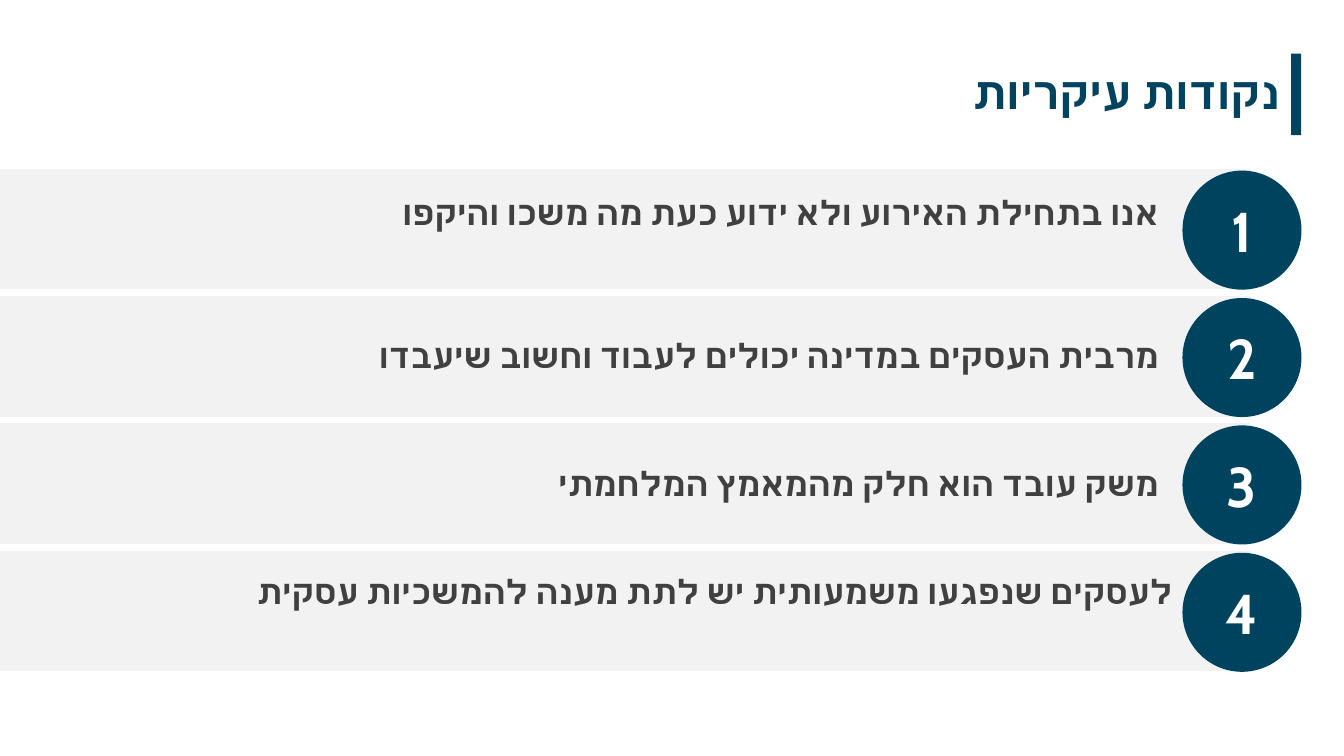
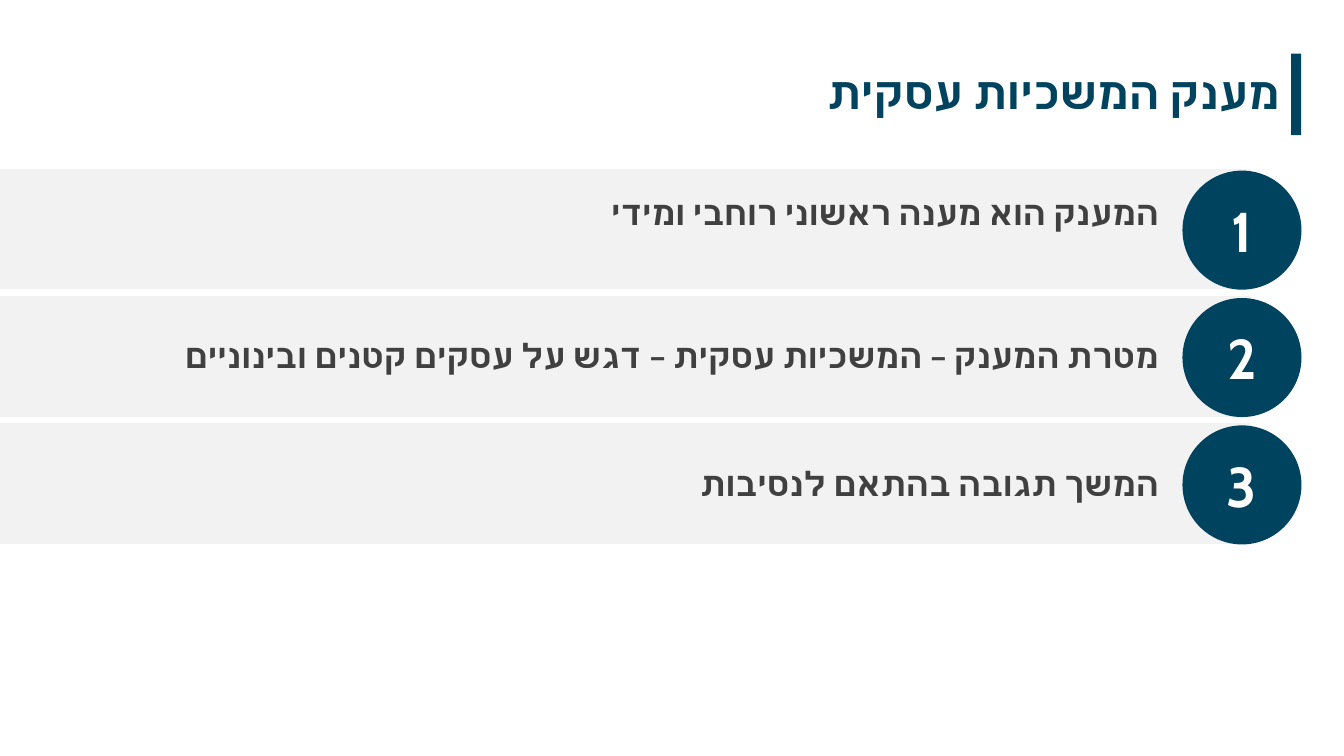
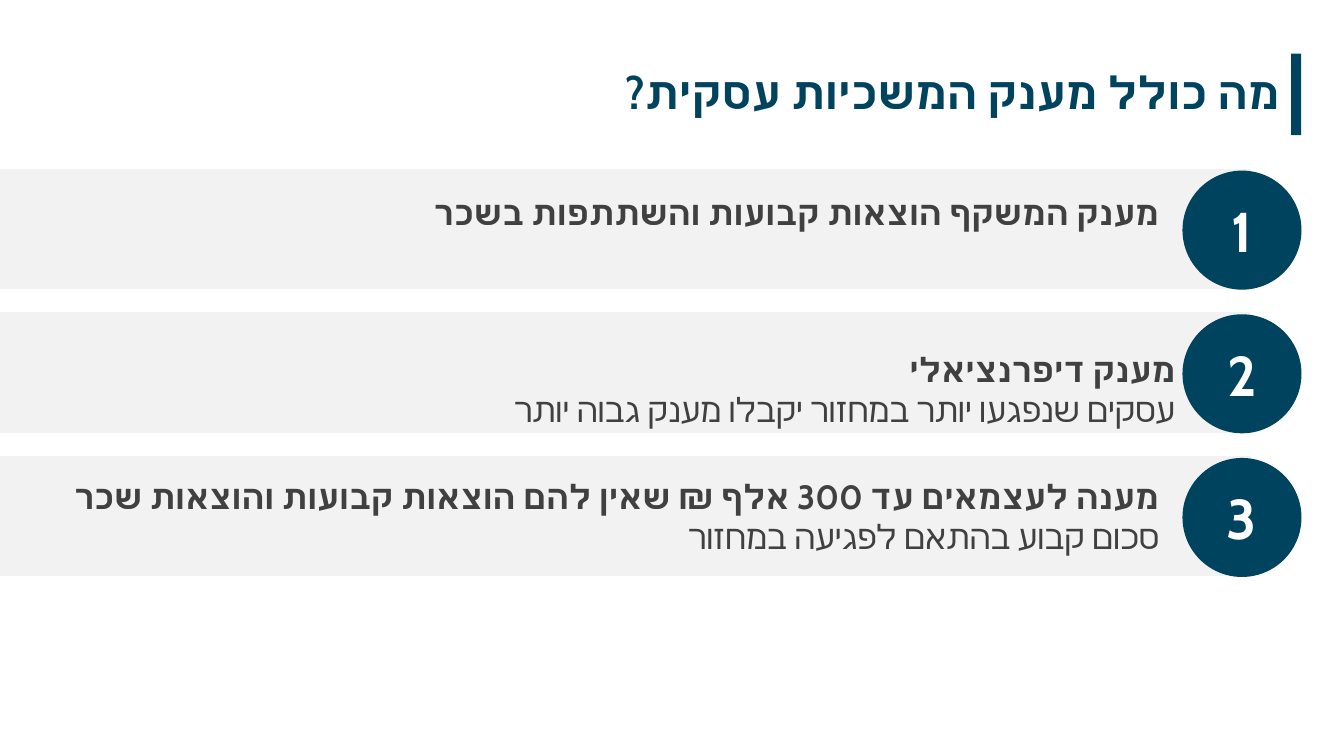
from lxml.etree import SubElement
from pptx import Presentation
from pptx.dml.color import RGBColor
from pptx.enum.shapes import MSO_SHAPE
from pptx.enum.text import MSO_ANCHOR, MSO_AUTO_SIZE, PP_ALIGN
from pptx.oxml.ns import qn
from pptx.util import Cm, Pt

FONT = "Cabin"
NAVY = "00435E"
GRAY = "404040"
BAND = "F2F2F2"
WHITE = "FFFFFF"


def color(value):
    return RGBColor.from_string(value)


def write(paragraph, text, size=24, fill=GRAY, bold=True, align=PP_ALIGN.RIGHT, rtl=True):
    paragraph.alignment = align
    if rtl:
        paragraph._p.get_or_add_pPr().set("rtl", "1")
    run = paragraph.add_run()
    run.text = text
    run.font.name = FONT
    run.font.size = Pt(size)
    run.font.bold = bold
    run.font.color.rgb = color(fill)
    SubElement(run._r.get_or_add_rPr(), qn("a:cs"), typeface=FONT)


class Deck:
    first_top = 4.27
    row_height = 3
    band_width = 31.5
    circle_left = 29.8
    text_right = 29.46

    def __init__(self):
        self.presentation = Presentation()
        self.presentation.slide_width = Cm(33.87)
        self.presentation.slide_height = Cm(19.05)
        self.slide = None

    def add_slide(self, title):
        self.slide = self.presentation.slides.add_slide(self.presentation.slide_layouts[5])
        self.add_title(title)
        self.add_block(MSO_SHAPE.RECTANGLE, 32.54, 1.35, 0.25, 2.06, NAVY)

    def add_title(self, text):
        shape = self.slide.shapes.title
        shape.left, shape.top, shape.width, shape.height = Cm(1.68), Cm(1.5), Cm(30.83), Cm(1.63)
        frame = shape.text_frame
        frame.auto_size = MSO_AUTO_SIZE.NONE
        frame.vertical_anchor = MSO_ANCHOR.TOP
        write(frame.paragraphs[0], text, size=32, fill=NAVY)

    def add_block(self, kind, left, top, width, height, fill, outlined=False):
        shape = self.slide.shapes.add_shape(kind, Cm(left), Cm(top), Cm(width), Cm(height))
        shape.shadow.inherit = False
        shape.fill.solid()
        shape.fill.fore_color.rgb = color(fill)
        if outlined:
            shape.line.color.rgb = color(fill)
            shape.line.width = Pt(1)
        else:
            shape.line.fill.background()
        return shape

    def add_number(self, number, top):
        circle = self.add_block(MSO_SHAPE.OVAL, self.circle_left, top, self.row_height, self.row_height, NAVY)
        circle.text_frame.vertical_anchor = MSO_ANCHOR.MIDDLE
        write(circle.text_frame.paragraphs[0], str(number), size=40, fill=WHITE,
              align=PP_ALIGN.CENTER, rtl=False)

    def add_text(self, lines, top, right):
        height = 1.27 + 1.04 * (len(lines) - 1)
        box = self.slide.shapes.add_textbox(0, Cm(top), Cm(right), Cm(height))
        frame = box.text_frame
        frame.word_wrap = True
        for index, line in enumerate(lines):
            paragraph = frame.add_paragraph() if index else frame.paragraphs[0]
            write(paragraph, line, bold=index == 0)

    def add_rows(self, rows, pitch):
        for index, (lines, offset, right) in enumerate(rows):
            top = self.first_top + index * pitch
            self.add_block(MSO_SHAPE.RECTANGLE, 0, top, self.band_width, self.row_height, BAND, outlined=True)
            self.add_text(lines, top + offset, right)
            self.add_number(index + 1, top + 0.03)


def main():
    deck = Deck()
    usual = deck.text_right
    slides = [
        ("נקודות עיקריות", 3.21, [
            (["אנו בתחילת האירוע ולא ידוע כעת מה משכו והיקפו"], 0.43, usual),
            (["מרבית העסקים במדינה יכולים לעבוד וחשוב שיעבדו"], 0.84, usual),
            (["משק עובד הוא חלק מהמאמץ המלחמתי"], 0.84, usual),
            (["לעסקים שנפגעו משמעותית יש לתת מענה להמשכיות עסקית"], 0.36, 29.8),
        ]),
        ("מענק המשכיות עסקית", 3.21, [
            (["המענק הוא מענה ראשוני רוחבי ומידי"], 0.43, usual),
            (["מטרת המענק – המשכיות עסקית – דגש על עסקים קטנים ובינוניים"], 0.84, usual),
            (["המשך תגובה בהתאם לנסיבות"], 0.84, usual),
        ]),
        ("מה כולל מענק המשכיות עסקית?", 3.62, [
            (["מענק המשקף הוצאות קבועות והשתתפות בשכר"], 0.43, usual),
            (["מענק דיפרנציאלי", "עסקים שנפגעו יותר במחזור יקבלו מענק גבוה יותר"], 0.78, 29.87),
            (["מענה לעצמאים עד 300 אלף ₪ שאין להם הוצאות קבועות והוצאות שכר",
              "סכום קבוע בהתאם לפגיעה במחזור"], 0.36, usual),
        ]),
    ]
    for title, pitch, rows in slides:
        deck.add_slide(title)
        deck.add_rows(rows, pitch)
    deck.presentation.save("out.pptx")


if __name__ == "__main__":
    main()
